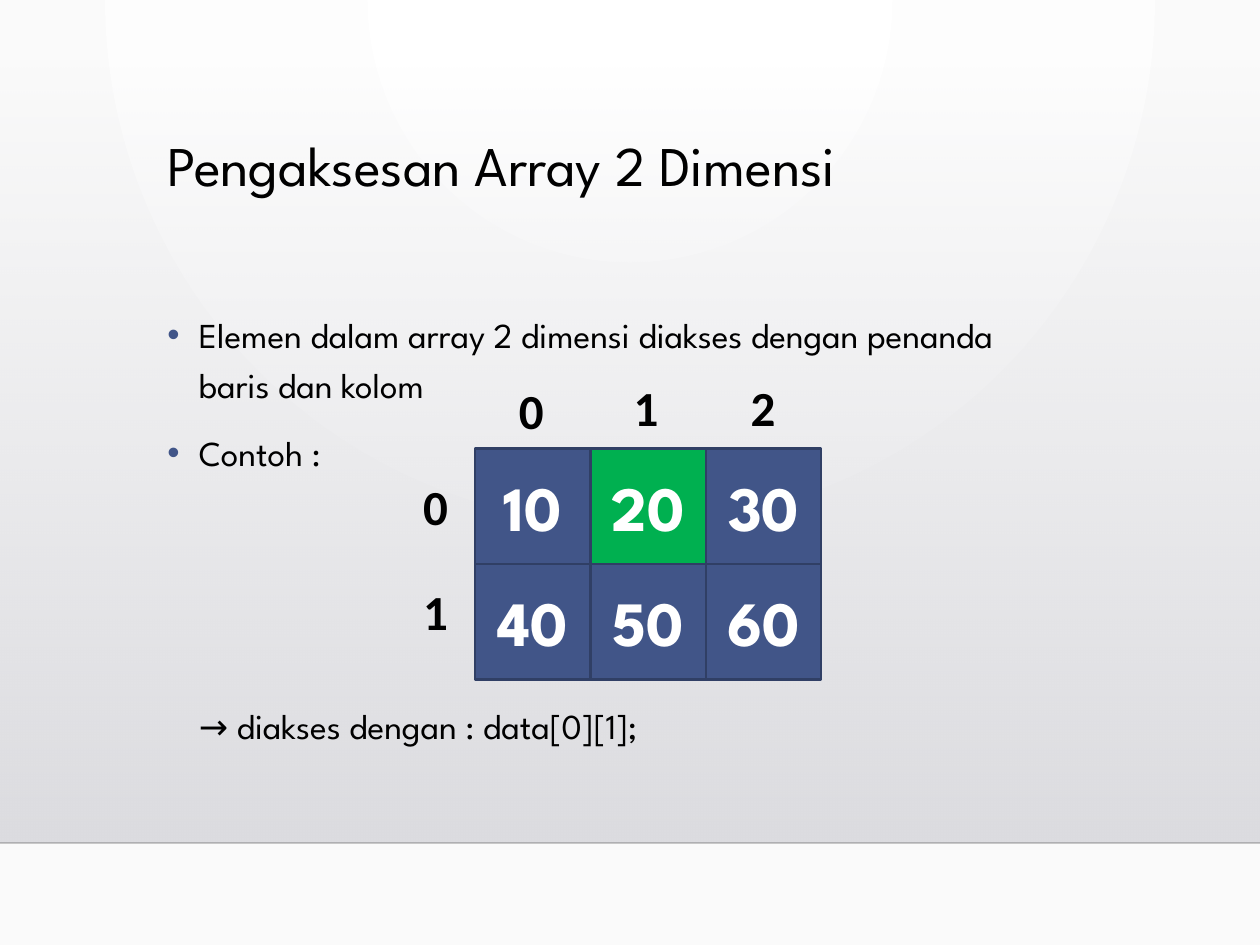
from pptx import Presentation
from pptx.dml.color import RGBColor
from pptx.enum.shapes import MSO_CONNECTOR, MSO_SHAPE
from pptx.enum.text import MSO_ANCHOR, PP_ALIGN
from pptx.oxml import parse_xml
from pptx.oxml.ns import nsdecls, qn
from pptx.util import Inches, Pt
from lxml.etree import SubElement

FONT = "League Spartan"
BLUE, GREEN, EDGE = "415588", "00B050", "303F65"


def rgb(color):
    return RGBColor.from_string(color)


def add_run(p, text, size, font=FONT, color="000000", bold=False):
    r = p.add_run()
    r.text = text
    r.font.size = Pt(size)
    r.font.name = font
    r.font.bold = bold
    r.font.color.rgb = rgb(color)


prs = Presentation()
prs.slide_width, prs.slide_height = Inches(10), Inches(7.5)
s = prs.slides.add_slide(prs.slide_layouts[6])

# Background: radial glow from the top centre
fill = s.background.fill
fill.gradient()
for stop, color in zip(fill.gradient_stops, ("FFFFFF", "FAFAFA")):
    stop.color.rgb = rgb(color)
grad = s.background._cSld.find(".//" + qn("a:gradFill"))
grad.replace(grad.find(qn("a:lin")), parse_xml(
    f'<a:path {nsdecls("a")} path="circle">'
    '<a:fillToRect l="43000" t="0" r="43000" b="100000"/></a:path>'))

# Grey panel, fading in downwards
panel = s.shapes.add_shape(MSO_SHAPE.RECTANGLE, 0, Inches(0.51), Inches(10), Inches(6.18))
panel.shadow.inherit = False
panel.line.fill.background()
panel.fill.gradient()
panel.fill.gradient_angle = 270
for stop, color, pos in zip(panel.fill.gradient_stops, ("DCDCE0", "DEDEE2"), (0, 1)):
    stop.color.rgb = rgb(color)
    stop.position = pos
clear = panel._element.spPr.find(".//" + qn("a:srgbClr"))
SubElement(clear, qn("a:alpha"), val="0")

# Rule under the panel
rule = s.shapes.add_connector(MSO_CONNECTOR.STRAIGHT, 0, Inches(6.69), Inches(10), Inches(6.69))
rule.line.width = Pt(1)
rule.line.color.rgb = rgb("000001")
SubElement(rule._element.spPr.find(".//" + qn("a:srgbClr")), qn("a:alpha"), val="20000")
SubElement(rule._element.spPr, qn("a:effectLst"))

# Title
tf = s.shapes.add_textbox(Inches(1.23), Inches(1.05), Inches(7.19), Inches(1.15)).text_frame
tf.word_wrap = True
p = tf.paragraphs[0]
p.line_spacing = 0.9
add_run(p, "Pengaksesan Array 2 Dimensi", 32)

# Body: two bullets, then the access expression below the grid
body = [
    ("Elemen dalam array 2 dimensi diakses dengan penanda baris dan kolom", True, 0),
    ("Contoh :", True, 10),
    ("→ diakses dengan : data[0][1];", False, 127),
]
tf = s.shapes.add_textbox(Inches(1.23), Inches(2.37), Inches(7.19), Inches(3.6)).text_frame
tf.word_wrap = True
for i, (text, bullet, before) in enumerate(body):
    p = tf.add_paragraph() if i else tf.paragraphs[0]
    p.line_spacing = 1.2
    p.space_before = Pt(before)
    pPr = p._p.get_or_add_pPr()
    pPr.set("marL", str(Inches(0.25)))
    if bullet:
        pPr.set("indent", str(Inches(-0.25)))
        SubElement(SubElement(pPr, qn("a:buClr")), qn("a:srgbClr"), val=BLUE)
        SubElement(pPr, qn("a:buFont"), typeface="Arial")
        SubElement(pPr, qn("a:buChar"), char="•")
    add_run(p, text, 20)

# Array cells, with element [0][1] highlighted
data = [[10, 20, 30], [40, 50, 60]]
cell = Inches(2.75) // 3
for row, values in enumerate(data):
    for col, value in enumerate(values):
        sp = s.shapes.add_shape(MSO_SHAPE.RECTANGLE, Inches(3.77) + col * cell,
                                Inches(3.56) + row * cell, cell, cell)
        sp.shadow.inherit = False
        sp.fill.solid()
        sp.fill.fore_color.rgb = rgb(GREEN if (row, col) == (0, 1) else BLUE)
        sp.line.color.rgb = rgb(EDGE)
        sp.line.width = Pt(1.25)
        tf = sp.text_frame
        tf.word_wrap = True
        tf.vertical_anchor = MSO_ANCHOR.MIDDLE
        p = tf.paragraphs[0]
        p.alignment = PP_ALIGN.CENTER
        add_run(p, str(value), 36, color="FFFFFF", bold=True)

# Column and row indices
indices = [
    ("0", 4.02, 2.97), ("1", 4.93, 2.95), ("2", 5.86, 2.95),
    ("0", 3.26, 3.73), ("1", 3.26, 4.57),
]
for text, x, y in indices:
    tf = s.shapes.add_textbox(Inches(x), Inches(y), Inches(0.4), Inches(0.57)).text_frame
    tf.word_wrap = False
    add_run(tf.paragraphs[0], text, 28, font="Calibri", bold=True)

prs.save("out.pptx")
